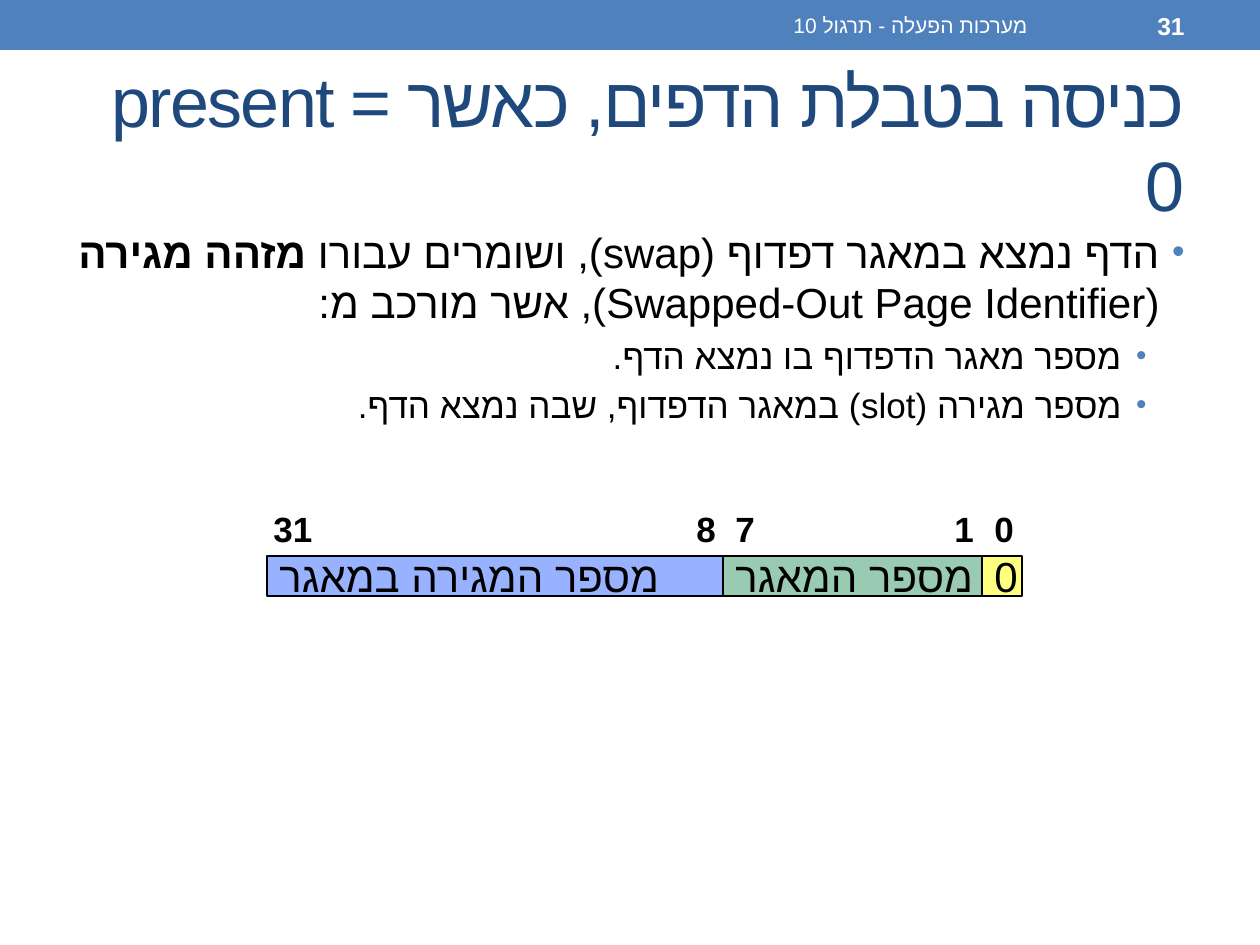
"""Build the slide on page table entries whose present bit is 0."""
from dataclasses import dataclass

from lxml.etree import SubElement
from pptx import Presentation
from pptx.dml.color import RGBColor
from pptx.enum.shapes import MSO_SHAPE
from pptx.enum.text import MSO_ANCHOR, MSO_AUTO_SIZE, PP_ALIGN
from pptx.oxml.ns import qn
from pptx.util import Emu, Pt


@dataclass(frozen=True)
class Theme:
    font: str = "Arial"
    accent: str = "4F81BD"
    heading: str = "1F497D"
    ink: str = "000000"
    paper: str = "FFFFFF"
    slot: str = "3366FF"
    area: str = "339966"
    present: str = "FFFF00"
    title: int = 40
    body: int = 24
    sub: int = 20
    number: int = 14
    footer: int = 12


T = Theme()


def box(*px):
    return [Emu(round(v * 914400 / 126)) for v in px]


def write(p, text, size, color=T.ink, bold=False, rtl=False, spacing=None):
    p.alignment = PP_ALIGN.RIGHT if rtl else PP_ALIGN.LEFT
    if rtl:
        p._p.get_or_add_pPr().set("rtl", "1")
    r = p.add_run()
    r.text = text
    r.font.name, r.font.size, r.font.bold = T.font, Pt(size), bold
    r.font.color.rgb = RGBColor.from_string(color)
    rPr = r._r.get_or_add_rPr()
    SubElement(rPr, qn("a:cs")).set("typeface", T.font)
    if spacing is not None:
        rPr.set("spc", str(spacing))


prs = Presentation()
prs.slide_width, prs.slide_height = box(1260, 945)
s = prs.slides.add_slide(prs.slide_layouts[5])

title = s.shapes.title
title.left, title.top, title.width, title.height = box(63, 73, 1134, 136)
tf = title.text_frame
tf.auto_size, tf.vertical_anchor = MSO_AUTO_SIZE.NONE, MSO_ANCHOR.MIDDLE
write(tf.paragraphs[0], "כניסה בטבלת הדפים, כאשר present = 0", T.title, T.heading, rtl=True, spacing=-100)

bar = s.shapes.add_shape(MSO_SHAPE.RECTANGLE, *box(0, 0, 1260, 50))
bar.shadow.inherit = False
bar.fill.solid()
bar.fill.fore_color.rgb = RGBColor.from_string(T.accent)
bar.line.fill.background()

headers = [
    (473, 567, "מערכות הפעלה - תרגול 10", T.footer, False),
    (1050, 147, "31", T.number, True),
]
for x, w, text, size, bold in headers:
    tf = s.shapes.add_textbox(*box(x, 3, w, 45)).text_frame
    tf.word_wrap, tf.vertical_anchor = True, MSO_ANCHOR.MIDDLE
    write(tf.paragraphs[0], text, size, T.paper, bold, rtl=True)

bullets = [
    (0, 25, T.body, [
        ("הדף נמצא במאגר דפדוף (swap), ושומרים עבורו ", False),
        ("מזהה מגירה ", True),
        ("(Swapped-Out Page Identifier), אשר מורכב מ:", False),
    ]),
    (1, 63, T.sub, [("מספר מאגר הדפדוף בו נמצא הדף.", False)]),
    (1, 63, T.sub, [("מספר מגירה (slot) במאגר הדפדוף, שבה נמצא הדף.", False)]),
]
tf = s.shapes.add_textbox(*box(63, 220, 1134, 672)).text_frame
tf.word_wrap = True
for i, (level, margin, size, runs) in enumerate(bullets):
    p = tf.add_paragraph() if i else tf.paragraphs[0]
    p.level = level
    for text, bold in runs:
        write(p, text, size, bold=bold, rtl=True)
    pPr = p._p.get_or_add_pPr()
    left, indent = box(margin, -25)
    pPr.set("marL", str(left))
    pPr.set("indent", str(indent))
    SubElement(SubElement(pPr, qn("a:spcBef")), qn("a:spcPct")).set("val", "20000")
    SubElement(SubElement(pPr, qn("a:buClr")), qn("a:srgbClr")).set("val", T.accent)
    SubElement(pPr, qn("a:buSzPct")).set("val", "85000")
    SubElement(pPr, qn("a:buFont")).set("typeface", T.font)
    SubElement(pPr, qn("a:buChar")).set("char", "•")

fields = [
    (267, 456, T.slot, "מספר המגירה במאגר"),
    (723, 259, T.area, "מספר המאגר"),
    (982, 40, T.present, "0"),
]
for x, w, color, text in fields:
    sp = s.shapes.add_shape(MSO_SHAPE.RECTANGLE, *box(x, 556, w, 40))
    sp.shadow.inherit = False
    sp.fill.solid()
    sp.fill.fore_color.rgb = RGBColor.from_string(color)
    clr = sp._element.spPr.find(qn("a:solidFill")).find(qn("a:srgbClr"))
    SubElement(clr, qn("a:alpha")).set("val", "50000")
    sp.line.color.rgb = RGBColor.from_string(T.ink)
    sp.line.width = Pt(0.75)
    tf = sp.text_frame
    tf.word_wrap, tf.vertical_anchor = False, MSO_ANCHOR.MIDDLE
    write(tf.paragraphs[0], text, T.body)

bits = [(982, 45, "0"), (942, 45, "1"), (723, 45, "7"), (684, 45, "8"), (261, 64, "31")]
for x, w, text in bits:
    tf = s.shapes.add_textbox(*box(x, 501, w, 55)).text_frame
    tf.word_wrap, tf.auto_size = False, MSO_AUTO_SIZE.SHAPE_TO_FIT_TEXT
    write(tf.paragraphs[0], text, T.sub, bold=True)

prs.save("out.pptx")
